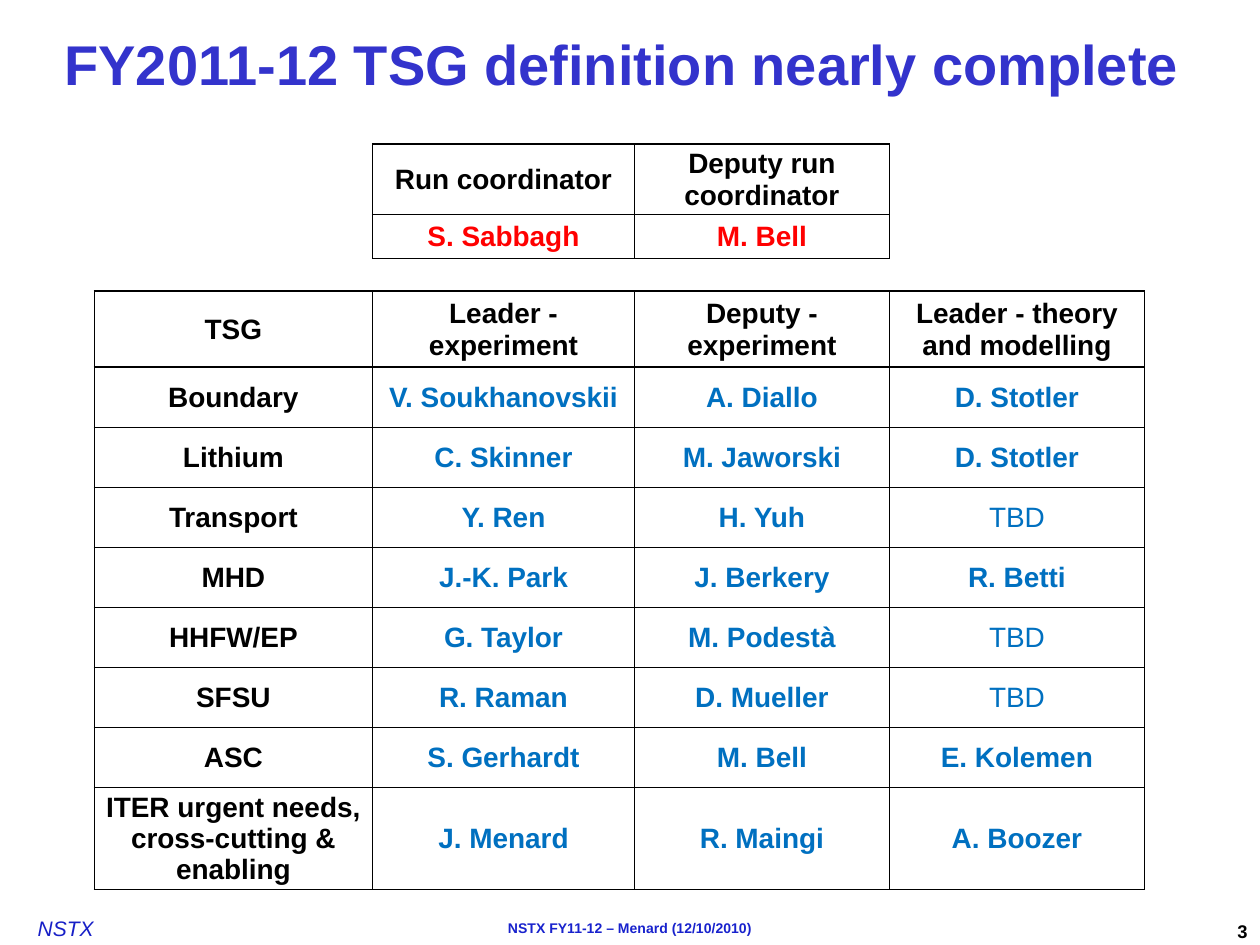
from lxml import etree
from pptx import Presentation
from pptx import util as u
from pptx.dml.color import RGBColor
from pptx.enum import text
from pptx.oxml import ns

HUES = {"black": "000000", "title": "3333CC", "name": "0070C0", "lead": "FF0000",
        "mark": "171FC7", "foot": "1822CD"}
FONT = "Arial"
ALIGN = text.PP_ALIGN

COLS = [5.61, 5.28, 5.14, 5.14]
ROWS = [1.42, 0.89, 0.66, 1.53] + [1.21] * 7 + [1.9]
HEAD = 3  # row that heads the group list
GRID = [
    ["", "Run coordinator", "Deputy run coordinator", ""],
    ["", "S. Sabbagh", "M. Bell", ""],
    ["", "", "", ""],
    ["TSG", "Leader - experiment", "Deputy - experiment", "Leader - theory and modelling"],
    ["Boundary", "V. Soukhanovskii", "A. Diallo", "D. Stotler"],
    ["Lithium", "C. Skinner", "M. Jaworski", "D. Stotler"],
    ["Transport", "Y. Ren", "H. Yuh", "TBD"],
    ["MHD", "J.-K. Park", "J. Berkery", "R. Betti"],
    ["HHFW/EP", "G. Taylor", "M. Podestà", "TBD"],
    ["SFSU", "R. Raman", "D. Mueller", "TBD"],
    ["ASC", "S. Gerhardt", "M. Bell", "E. Kolemen"],
    ["ITER urgent needs, cross-cutting & enabling", "J. Menard", "R. Maingi", "A. Boozer"],
]


def add_run(para, words, size, hue, bold=False, slant=False):
    run = para.add_run()
    run.text = words
    font = run.font
    font.name, font.size = FONT, u.Pt(size)
    font.bold, font.italic = bold, slant
    font.color.rgb = RGBColor.from_string(HUES[hue])


def add_label(slide, box, words, size, hue, align, inset=True, mid=False, **style):
    frame = slide.shapes.add_textbox(*map(u.Cm, box)).text_frame
    frame.word_wrap = True
    if not inset:
        frame.margin_left = frame.margin_right = 0
        frame.margin_top = frame.margin_bottom = 0
    if mid:
        frame.vertical_anchor = text.MSO_ANCHOR.MIDDLE
    para = frame.paragraphs[0]
    para.alignment = align
    add_run(para, words, size, hue, **style)


def is_full(row, col):
    return 0 <= row < len(ROWS) and 0 <= col < len(COLS) and GRID[row][col] != ""


def edge_width(row, col, down, right):
    """Points of the line shared with the next cell; 0 where both are empty."""
    here, there = is_full(row, col), is_full(row + down, col + right)
    if not (here or there):
        return 0
    if down:
        thin = here and there and min(row, row + down) > HEAD
    else:
        thin = here and there and row >= HEAD and min(col, col + right) > 0
    return 0.5 if thin else 1


def draw_edges(cell, row, col):
    props = cell._tc.get_or_add_tcPr()
    sides = [("lnL", 0, -1), ("lnR", 0, 1), ("lnT", -1, 0), ("lnB", 1, 0)]
    for spot, (tag, down, right) in enumerate(sides):
        width = edge_width(row, col, down, right)
        line = etree.Element(ns.qn("a:" + tag), w=str(int(u.Pt(width))))
        if width:
            fill = etree.SubElement(line, ns.qn("a:solidFill"))
            etree.SubElement(fill, ns.qn("a:srgbClr"), val=HUES["black"])
        else:
            etree.SubElement(line, ns.qn("a:noFill"))
        props.insert(spot, line)


def cell_hue(row, col):
    if row == 1:
        return "lead"
    return "name" if row > HEAD and col else "black"


def add_roster(slide, box):
    frame = slide.shapes.add_table(len(ROWS), len(COLS), *map(u.Cm, box))
    table = frame.table
    table.first_row = table.horz_banding = False
    for col, width in zip(table.columns, COLS):
        col.width = u.Cm(width)
    for row, height in zip(table.rows, ROWS):
        row.height = u.Cm(height)
    for row, line in enumerate(GRID):
        for col, words in enumerate(line):
            cell = table.cell(row, col)
            cell.fill.background()
            cell.margin_left = cell.margin_right = cell.margin_top = u.Cm(0.03)
            cell.margin_bottom = 0
            cell.vertical_anchor = text.MSO_ANCHOR.MIDDLE
            para = cell.text_frame.paragraphs[0]
            para.alignment = ALIGN.CENTER
            if words:
                add_run(para, words, 16, cell_hue(row, col), bold=words != "TBD")
            else:
                etree.SubElement(para._p, ns.qn("a:endParaRPr"), sz="1000")
            draw_edges(cell, row, col)


def add_footer(slide, box):
    left, top, width, height = box
    add_label(slide, (left + 0.76, top + 0.03, 1.5, 0.51), "NSTX", 12, "mark",
              ALIGN.LEFT, inset=False, slant=True)
    add_label(slide, (left + 5.08, top, width - 10.16, height),
              "NSTX FY11-12 – Menard (12/10/2010)", 8, "foot", ALIGN.CENTER, bold=True)
    add_label(slide, (left + width - 2.11, top, 2.11, height), "3", 10.5, "black",
              ALIGN.RIGHT, bold=True)


def main():
    deck = Presentation()
    deck.slide_width, deck.slide_height = u.Cm(25.4), u.Cm(19.05)
    slide = deck.slides.add_slide(deck.slide_layouts[6])
    add_label(slide, (0, 0, 25.4, 2.54), "FY2011-12 TSG definition nearly complete ", 32,
              "title", ALIGN.CENTER, mid=True, bold=True)
    add_roster(slide, (1.9, 2.9, sum(COLS), sum(ROWS)))
    add_footer(slide, (0, 18.42, 25.4, 0.62))
    deck.save("out.pptx")


if __name__ == "__main__":
    main()
